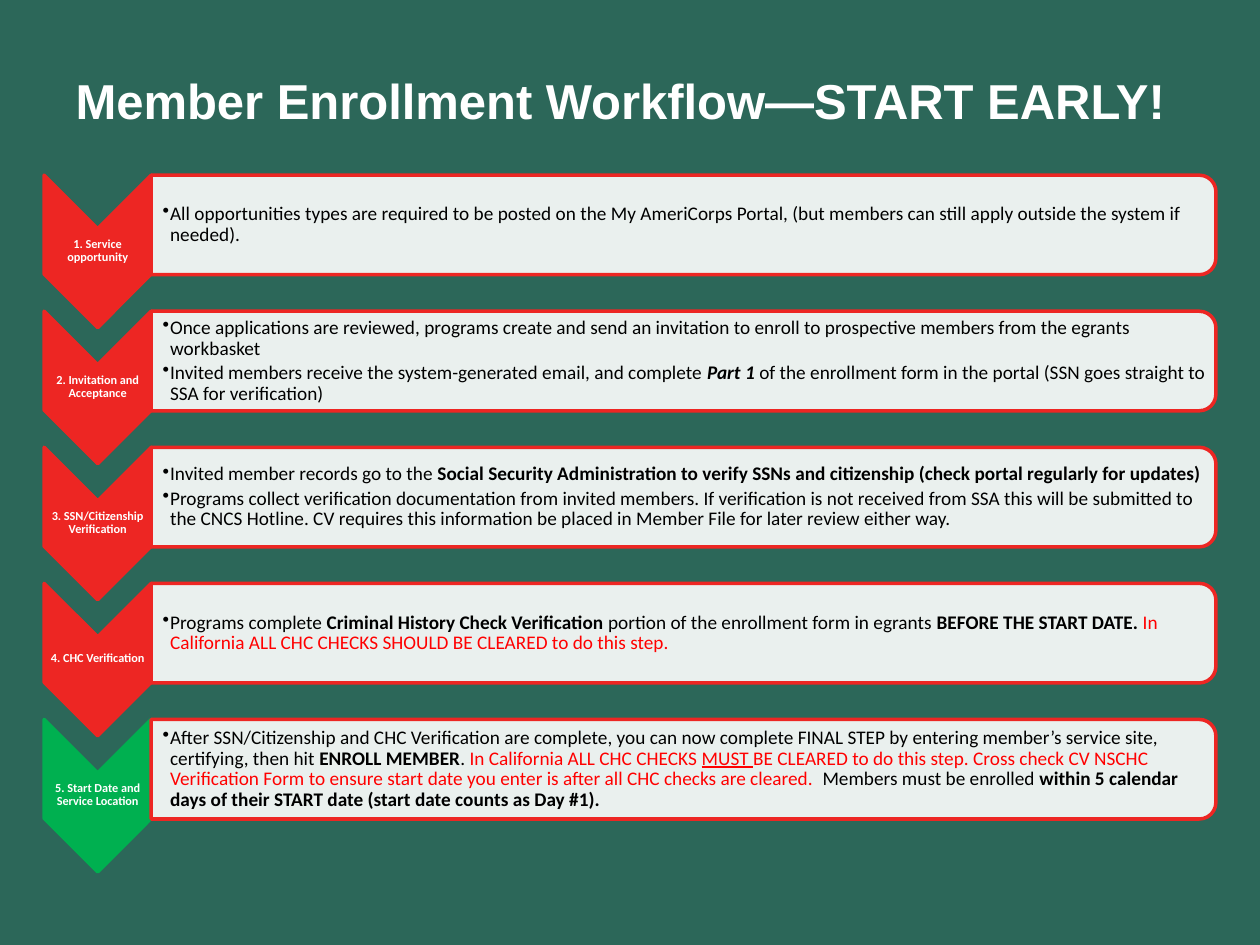
from dataclasses import dataclass

from lxml.etree import SubElement
from pptx import Presentation
from pptx.dml.color import RGBColor
from pptx.enum.shapes import MSO_SHAPE as Preset
from pptx.enum.text import MSO_ANCHOR as Anchor, MSO_AUTO_SIZE as AutoSize, PP_ALIGN as Align
from pptx.oxml.ns import qn
from pptx.shapes.autoshape import Shape
from pptx.slide import Slide
from pptx.text.text import TextFrame
from pptx.util import Inches, Pt

GREEN_BACKGROUND = RGBColor(0x2C, 0x67, 0x59)
WHITE = RGBColor(0xFF, 0xFF, 0xFF)
BLACK = RGBColor(0x00, 0x00, 0x00)
RED = RGBColor(0xED, 0x26, 0x23)
RED_TEXT = RGBColor(0xFF, 0x00, 0x00)
GREEN = RGBColor(0x00, 0xB0, 0x50)

# Row geometry in inches
ROW_TOP = 1.39
ROW_PITCH = 1.08
ARROW_LEFT, ARROW_WIDTH, ARROW_HEIGHT = 0.35, 0.85, 1.21
PANEL_LEFT, PANEL_WIDTH, PANEL_HEIGHT = 1.2, 8.45, 0.79


@dataclass(frozen=True)
class Span:
    text: str
    bold: bool = False
    italic: bool = False
    underline: bool = False
    color: RGBColor = BLACK


@dataclass(frozen=True)
class Step:
    label: str
    bullets: list[list[Span]]
    color: RGBColor = RED


STEPS = [
    Step("1. Service opportunity", [
        [Span("All opportunities types are required to be posted on the My AmeriCorps Portal, "
              "(but members can still apply outside the system if needed).")],
    ]),
    Step("2. Invitation and Acceptance", [
        [Span("Once applications are reviewed, programs create and send an invitation to enroll "
              "to prospective members from the egrants workbasket")],
        [Span("Invited members receive the system-generated email, and complete "),
         Span("Part 1", bold=True, italic=True),
         Span(" of the enrollment form in the portal (SSN goes straight to SSA for verification)")],
    ]),
    Step("3. SSN/Citizenship Verification", [
        [Span("Invited member records go to the "),
         Span("Social Security Administration to verify SSNs and citizenship "
              "(check portal regularly for updates)", bold=True)],
        [Span("Programs collect verification documentation from invited members. If verification "
              "is not received from SSA this will be submitted to the CNCS Hotline. CV requires "
              "this information be placed in Member File for later review either way.")],
    ]),
    Step("4. CHC Verification", [
        [Span("Programs complete "),
         Span("Criminal History Check Verification ", bold=True),
         Span("portion of the enrollment form in egrants "),
         Span("BEFORE THE START DATE. ", bold=True),
         Span("In California ALL CHC CHECKS SHOULD BE CLEARED to do this step.", color=RED_TEXT)],
    ]),
    Step("5. Start Date and Service Location", [
        [Span("After SSN/Citizenship and CHC Verification are complete, you can now complete "
              "FINAL STEP by entering member’s service site, certifying, then hit "),
         Span("ENROLL MEMBER", bold=True),
         Span(". "),
         Span("In California ALL CHC CHECKS ", color=RED_TEXT),
         Span("MUST ", underline=True, color=RED_TEXT),
         Span("BE CLEARED to do this step. Cross check CV NSCHC Verification Form to ensure "
              "start date you enter is after all CHC checks are cleared.  ", color=RED_TEXT),
         Span("Members must be enrolled "),
         Span("within 5 calendar days of their START date (start date counts as Day #1).",
              bold=True)],
    ], GREEN),
]


def add_turned_shape(slide: Slide, preset: Preset, left: float, top: float, width: float,
                     height: float, fill: RGBColor, line: RGBColor) -> Shape:
    """Add a shape turned by 90 degrees that covers the given area once turned."""
    shift = (width - height) / 2
    shape = slide.shapes.add_shape(preset, Inches(left + shift), Inches(top - shift),
                                   Inches(height), Inches(width))
    shape.rotation = 90
    shape.shadow.inherit = False
    shape.fill.solid()
    shape.fill.fore_color.rgb = fill
    shape.line.color.rgb = line
    shape.line.width = Pt(2)
    return shape


def set_opacity(shape: Shape, percent: int) -> None:
    color = shape._element.spPr.find(qn("a:solidFill"))[0]
    SubElement(color, qn("a:alpha"), val=str(percent * 1000))


def add_text_frame(slide: Slide, left: float, top: float, width: float, height: float,
                   margin: float, margin_left: float) -> TextFrame:
    box = slide.shapes.add_textbox(Inches(left), Inches(top), Inches(width), Inches(height))
    frame = box.text_frame
    frame.word_wrap = True
    frame.vertical_anchor = Anchor.MIDDLE
    frame.margin_top = frame.margin_right = frame.margin_bottom = Inches(margin)
    frame.margin_left = Inches(margin_left)
    return frame


def add_label(slide: Slide, text: str, top: float) -> None:
    frame = add_text_frame(slide, ARROW_LEFT, top, ARROW_WIDTH, 0.36, 0, 0)
    paragraph = frame.paragraphs[0]
    paragraph.text = text
    paragraph.alignment = Align.CENTER
    paragraph.line_spacing = 0.9
    paragraph.font.name = "Calibri"
    paragraph.font.size = Pt(7)
    paragraph.font.bold = True
    paragraph.font.color.rgb = WHITE


def add_bullets(slide: Slide, bullets: list[list[Span]], top: float) -> None:
    frame = add_text_frame(slide, PANEL_LEFT, top, 8.41, 0.71, 0.01, 0.09)
    for index, spans in enumerate(bullets):
        paragraph = frame.paragraphs[0] if index == 0 else frame.add_paragraph()
        paragraph.line_spacing = 0.9
        paragraph.space_after = Pt(2)
        properties = paragraph._p.get_or_add_pPr()
        properties.set("marL", str(Inches(0.06)))
        properties.set("indent", str(Inches(-0.06)))
        SubElement(properties, qn("a:buChar"), char="•")
        paragraph.font.name = "Calibri"
        paragraph.font.size = Pt(11)
        for span in spans:
            run = paragraph.add_run()
            run.text = span.text
            run.font.bold = span.bold
            run.font.italic = span.italic
            run.font.underline = span.underline
            run.font.color.rgb = span.color


def add_step(slide: Slide, step: Step, top: float) -> None:
    add_turned_shape(slide, Preset.CHEVRON, ARROW_LEFT, top, ARROW_WIDTH, ARROW_HEIGHT,
                     step.color, step.color)
    add_label(slide, step.label, top + 0.42)
    panel = add_turned_shape(slide, Preset.ROUND_2_SAME_RECTANGLE, PANEL_LEFT, top,
                             PANEL_WIDTH, PANEL_HEIGHT, WHITE, RED)
    set_opacity(panel, 90)
    add_bullets(slide, step.bullets, top + 0.04)


def add_title(slide: Slide, text: str) -> None:
    title = slide.shapes.title
    title.left, title.top = Inches(0.5), Inches(0.1)
    title.width, title.height = Inches(9), Inches(0.98)
    frame = title.text_frame
    frame.auto_size = AutoSize.NONE
    frame.vertical_anchor = Anchor.BOTTOM
    paragraph = frame.paragraphs[0]
    paragraph.text = text
    paragraph.alignment = Align.LEFT
    paragraph.line_spacing = 0.9
    paragraph.font.name = "Arial"
    paragraph.font.size = Pt(28)
    paragraph.font.bold = True
    paragraph.font.color.rgb = WHITE


def main() -> None:
    presentation = Presentation()
    presentation.slide_width, presentation.slide_height = Inches(10), Inches(7.5)
    slide = presentation.slides.add_slide(presentation.slide_layouts[5])
    slide.background.fill.solid()
    slide.background.fill.fore_color.rgb = GREEN_BACKGROUND

    add_title(slide, "Member Enrollment Workflow—START EARLY!")

    # Workflow rows
    for index, step in enumerate(STEPS):
        add_step(slide, step, ROW_TOP + index * ROW_PITCH)

    presentation.save("out.pptx")


if __name__ == "__main__":
    main()
